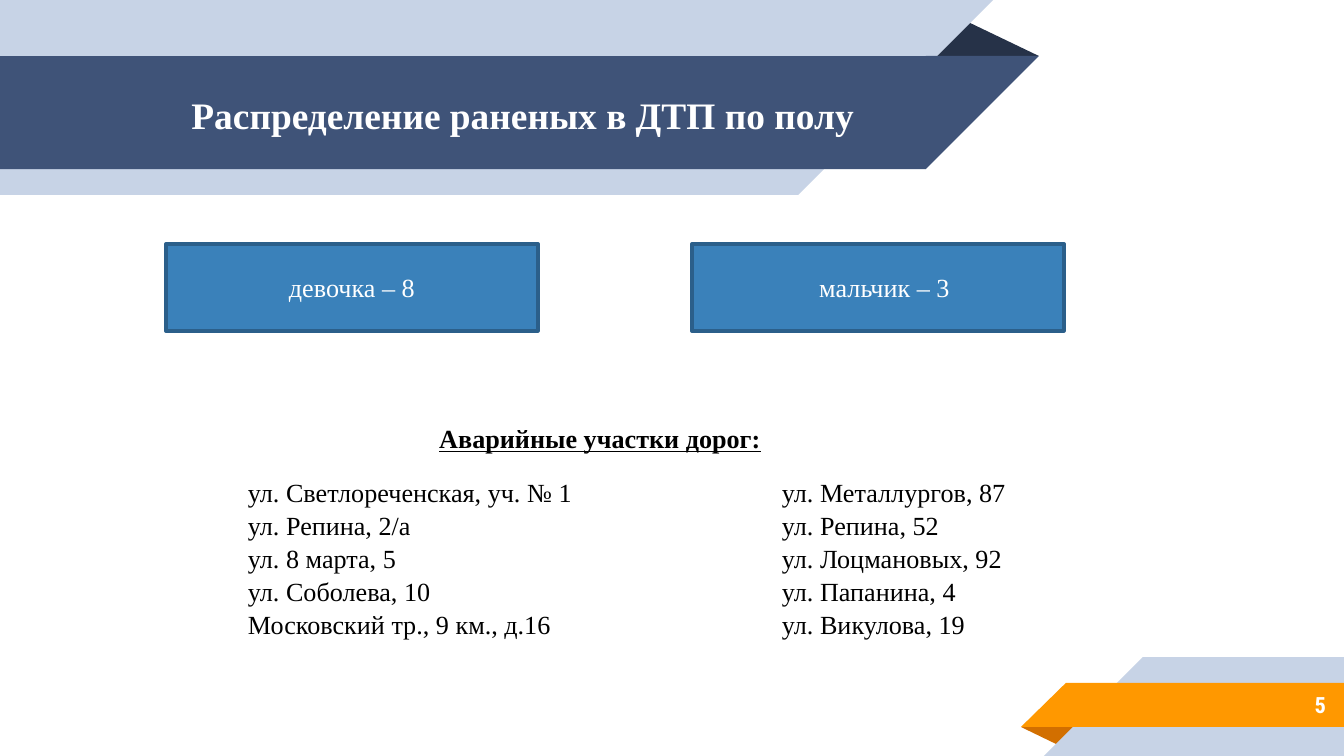
from dataclasses import dataclass

from lxml import etree
from pptx import Presentation
from pptx.dml.color import RGBColor
from pptx.enum.shapes import MSO_SHAPE
from pptx.enum.text import MSO_ANCHOR, PP_ALIGN
from pptx.oxml.ns import qn
from pptx.util import Emu, Pt

RECT = MSO_SHAPE.RECTANGLE
CORNER = MSO_SHAPE.RIGHT_TRIANGLE
FOLD = MSO_SHAPE.ISOSCELES_TRIANGLE
LEFT, CENTER, RIGHT = PP_ALIGN.LEFT, PP_ALIGN.CENTER, PP_ALIGN.RIGHT
TOP, MIDDLE = MSO_ANCHOR.TOP, MSO_ANCHOR.MIDDLE

WHITE = RGBColor(0xFF, 0xFF, 0xFF)
BLACK = RGBColor(0x00, 0x00, 0x00)
PALE = RGBColor(0xC7, 0xD3, 0xE6)
NAVY = RGBColor(0x3F, 0x53, 0x78)
DARK = RGBColor(0x26, 0x32, 0x48)
ORANGE = RGBColor(0xFF, 0x98, 0x00)
RUST = RGBColor(0xD2, 0x6F, 0x00)
BLUE = RGBColor(0x3A, 0x81, 0xBA)
BLUE_EDGE = RGBColor(0x2B, 0x5F, 0x8A)

SERIF = "Times New Roman"
SANS = "Roboto Condensed"
INSET = 13
FOLD_APEX = 0.324


def px(length: int) -> Emu:
    return Emu(round(length * 914400 / 134.4))


@dataclass(frozen=True)
class Box:
    left: int
    top: int
    width: int
    height: int

    def emu(self) -> tuple[Emu, ...]:
        return tuple(map(px, (self.left, self.top, self.width, self.height)))


@dataclass(frozen=True)
class Piece:
    kind: MSO_SHAPE
    box: Box
    color: RGBColor
    turned: bool = False
    mirrored: bool = False


def draw_piece(slide, piece: Piece):
    shape = slide.shapes.add_shape(piece.kind, *piece.box.emu())
    shape.shadow.inherit = False
    shape.fill.solid()
    shape.fill.fore_color.rgb = piece.color
    shape.line.fill.background()
    if piece.kind == FOLD:
        shape.adjustments[0] = FOLD_APEX
    if piece.turned:
        shape.rotation = 180
    if piece.mirrored:
        shape._element.spPr.find(qn("a:xfrm")).set("flipH", "1")
    return shape


def write(shape, text: str, *, size: int = 14, font: str = SERIF,
          color: RGBColor = BLACK, bold: bool = False, underline: bool = False,
          align: PP_ALIGN = LEFT, anchor: MSO_ANCHOR = MIDDLE, inset: int = INSET,
          indent: int = 0, tab: int = 0, spacing: float = 1.0) -> None:
    frame = shape.text_frame
    frame.word_wrap = True
    frame.vertical_anchor = anchor
    frame.margin_left = frame.margin_right = px(inset)
    frame.margin_top = frame.margin_bottom = px(inset)
    frame.text = text
    for paragraph in frame.paragraphs:
        paragraph.alignment = align
        paragraph.line_spacing = spacing
        properties = paragraph._p.get_or_add_pPr()
        if indent:
            properties.set("marL", str(px(indent)))
        if tab:
            stops = etree.SubElement(properties, qn("a:tabLst"))
            etree.SubElement(stops, qn("a:tab"), pos=str(px(tab)), algn="l")
        for run in paragraph.runs:
            run.font.name = font
            run.font.size = Pt(size)
            run.font.bold = bold
            run.font.underline = underline
            run.font.color.rgb = color


def add_text(slide, box: Box, text: str, **text_format) -> None:
    write(slide.shapes.add_textbox(*box.emu()), text, **text_format)


# Ribbons: title at the top left, slide number at the bottom right
RIBBONS = [
    Piece(FOLD, Box(925, 19, 114, 37), DARK),
    Piece(RECT, Box(0, 0, 798, 195), PALE, True, True),
    Piece(CORNER, Box(798, 0, 195, 195), PALE, True, True),
    Piece(RECT, Box(0, 56, 926, 113), NAVY, True, True),
    Piece(CORNER, Box(926, 56, 113, 113), NAVY, True, True),
    Piece(FOLD, Box(1021, 727, 58, 19), RUST, True),
    Piece(RECT, Box(1143, 657, 201, 99), PALE, mirrored=True),
    Piece(CORNER, Box(1044, 657, 99, 99), PALE, mirrored=True),
    Piece(RECT, Box(1066, 683, 278, 44), ORANGE, mirrored=True),
    Piece(CORNER, Box(1021, 683, 45, 44), ORANGE, mirrored=True),
]

# Injured by sex: label and its left indent
COUNTS = [("девочка – 8", 0), ("мальчик – 3", 13)]
COUNT_LEFT, COUNT_STEP = 166, 526

# Dangerous road sections, in two columns
SECTIONS = [
    ("ул. Светлореченская, уч. № 1", "ул. Металлургов, 87"),
    ("ул. Репина, 2/а", "ул. Репина, 52"),
    ("ул. 8 марта, 5", "ул. Лоцмановых, 92"),
    ("ул. Соболева, 10", "ул. Папанина, 4"),
    ("Московский тр., 9 км., д.16", "ул. Викулова, 19"),
]


def main() -> None:
    deck = Presentation()
    deck.slide_width, deck.slide_height = px(1344), px(756)
    slide = deck.slides.add_slide(deck.slide_layouts[6])

    for piece in RIBBONS:
        draw_piece(slide, piece)

    # Title and slide number
    add_text(slide, Box(119, 58, 808, 113), "Распределение раненых в ДТП по полу",
             size=20, color=WHITE, bold=True, align=CENTER)
    add_text(slide, Box(1120, 681, 219, 47), "5",
             size=12, font=SANS, color=WHITE, bold=True, align=RIGHT)

    # Count boxes
    for index, (label, indent) in enumerate(COUNTS):
        box = Box(COUNT_LEFT + index * COUNT_STEP, 244, 372, 87)
        count = draw_piece(slide, Piece(RECT, box, BLUE))
        count.line.color.rgb = BLUE_EDGE
        count.line.width = Pt(2)
        write(count, label, color=WHITE, align=CENTER, indent=indent)

    # Road sections
    add_text(slide, Box(149, 421, 902, 36), "Аварийные участки дорог:", bold=True,
             underline=True, align=CENTER, anchor=TOP, inset=0, spacing=1.05)
    add_text(slide, Box(248, 475, 803, 162), "\n".join(map("\t".join, SECTIONS)),
             anchor=TOP, inset=0, tab=534, spacing=1.05)

    deck.save("out.pptx")


if __name__ == "__main__":
    main()
